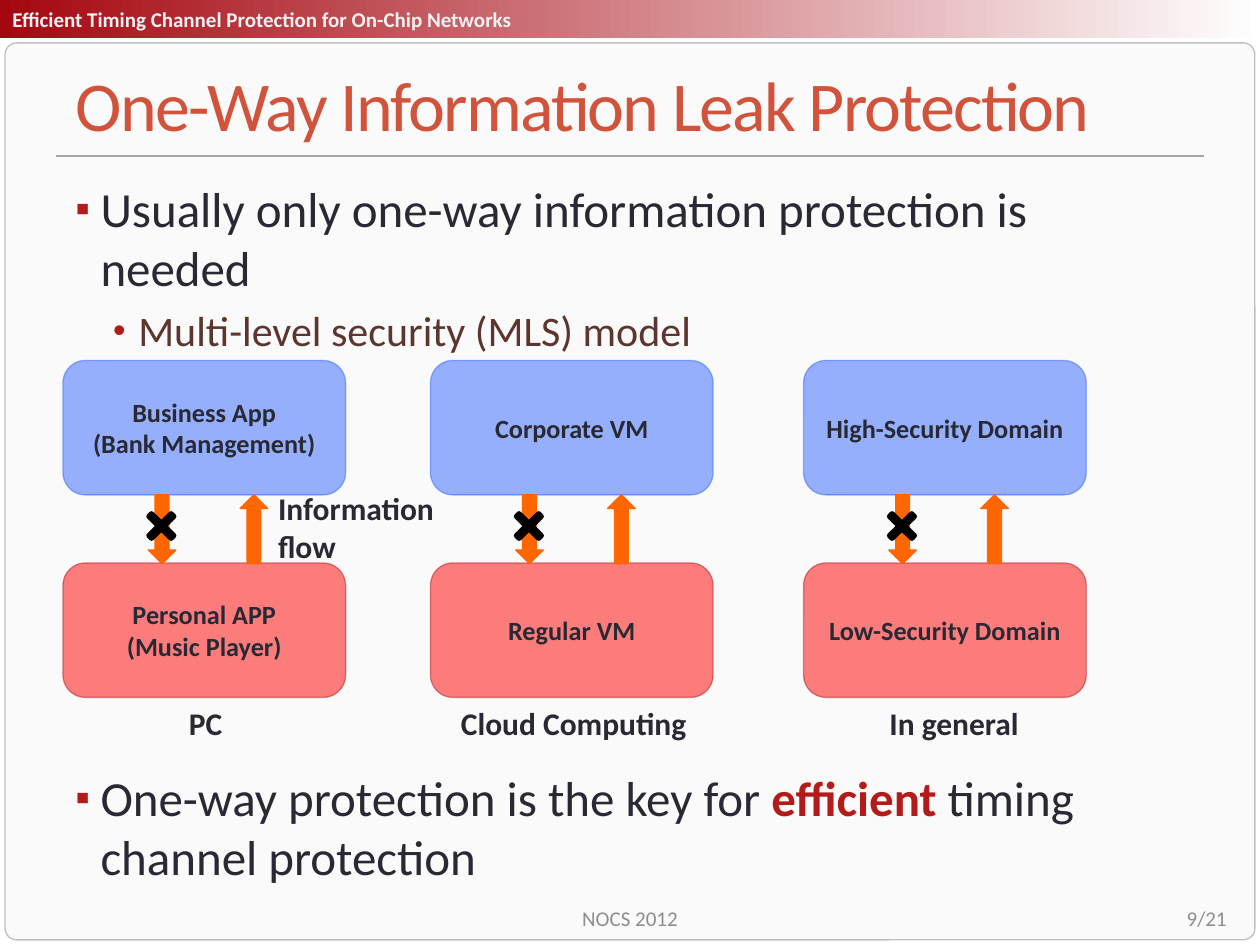
from lxml import etree
from pptx import Presentation
from pptx.dml import color
from pptx.enum import shapes, text
from pptx.oxml import ns
from pptx.util import Pt

RGBColor = color.RGBColor
WHITE = RGBColor(0xFF, 0xFF, 0xFF)
PANEL = RGBColor(0xFA, 0xFA, 0xFA)
PANEL_EDGE = RGBColor(0xBF, 0xBF, 0xBF)
RULE = RGBColor(0xA6, 0xA6, 0xA6)
HEADER_RED = RGBColor(0xA5, 0x07, 0x10)
HEADER_TEXT = RGBColor(0xF2, 0xF2, 0xF2)
TITLE = RGBColor(0xD2, 0x53, 0x3C)
INK = RGBColor(0x29, 0x29, 0x34)
BROWN = RGBColor(0x5B, 0x35, 0x2E)
ACCENT = RGBColor(0xB3, 0x1B, 0x1B)
FOOTER = RGBColor(0x8D, 0x8D, 0x8F)
HIGH = RGBColor(0x33, 0x66, 0xFF)
LOW = RGBColor(0xFF, 0x00, 0x00)
FLOW = RGBColor(0xFF, 0x66, 0x00)
BLACK = RGBColor(0, 0, 0)

FONT = "Calibri"
KINDS = shapes.MSO_SHAPE
LEFT, CENTER, RIGHT = text.PP_ALIGN.LEFT, text.PP_ALIGN.CENTER, text.PP_ALIGN.RIGHT
MIDDLE = text.MSO_ANCHOR.MIDDLE

BOX_WIDTH, BOX_HEIGHT = 161.5, 76.8
HIGH_TOP, LOW_TOP = 206, 321.7
ARROW_TOP = 282.7

# column left, high box, low box, caption, caption left, caption width
COLUMNS = [
    (36, "Business App\n(Bank Management)", "Personal APP\n(Music Player)", "PC", 100.8, 34),
    (246, "Corporate VM", "Regular VM", "Cloud Computing", 256.3, 145),
    (459.2, "High-Security Domain", "Low-Security Domain", "In general", 501.2, 89),
]


def style(span, size, ink, bold=False):
    span.font.name = FONT
    span.font.size = Pt(size)
    span.font.color.rgb = ink
    span.font.bold = bold


def write(frame, words, size, ink, bold=False, align=LEFT):
    frame.text = words
    for para in frame.paragraphs:
        para.alignment = align
        for span in para.runs:
            style(span, size, ink, bold)


def add_label(page, place, words, size, ink, bold=False, align=LEFT, wrap=False):
    box = page.shapes.add_textbox(*map(Pt, place))
    box.text_frame.word_wrap = wrap
    write(box.text_frame, words, size, ink, bold, align)
    return box


def add_figure(page, kind, place, fill, edge, weight=0.75):
    figure = page.shapes.add_shape(kind, *map(Pt, place))
    figure.shadow.inherit = False
    figure.fill.solid()
    figure.fill.fore_color.rgb = fill
    figure.line.color.rgb = edge
    figure.line.width = Pt(weight)
    return figure


def make_half_transparent(figure):
    """Give both the fill and the outline 50 % opacity."""
    for tone in figure._element.spPr.iter(ns.qn("a:srgbClr")):
        etree.SubElement(tone, ns.qn("a:alpha"), val="50000")


def add_domain(page, left, top, words, fill, edge):
    place = (left, top, BOX_WIDTH, BOX_HEIGHT)
    domain = add_figure(page, KINDS.ROUNDED_RECTANGLE, place, fill, edge)
    make_half_transparent(domain)
    domain.text_frame.vertical_anchor = MIDDLE
    write(domain.text_frame, words, 15, INK, True, CENTER)


def add_column(page, left, high, low, caption, caption_left, caption_width):
    add_domain(page, left, LOW_TOP, low, LOW, ACCENT)
    add_domain(page, left, HIGH_TOP, high, HIGH, HIGH)
    for kind, offset in ((KINDS.DOWN_ARROW, 48.7), (KINDS.UP_ARROW, 101.2)):
        add_figure(page, kind, (left + offset, ARROW_TOP, 15.8, 39.5), FLOW, FLOW)
    cross = add_figure(page, KINDS.MATH_MULTIPLY, (left + 44, 288.6, 24.5, 24), BLACK, BLACK, 3)
    cross.adjustments[0] = 0.088
    add_label(page, (caption_left, 399, caption_width, 29), caption, 18, INK, True)


def add_bullet(para, spans, size, mark, margin):
    """Fill a paragraph with (words, colour, bold) spans and a hanging bullet."""
    para.space_before = Pt(size * 0.2)
    for words, ink, bold in spans:
        span = para.add_run()
        span.text = words
        style(span, size, ink, bold)
    props = para._p.get_or_add_pPr()
    props.set("marL", str(Pt(margin)))
    props.set("indent", str(Pt(-14.4)))
    tone = etree.SubElement(props, ns.qn("a:buClr"))
    etree.SubElement(tone, ns.qn("a:srgbClr"), val=str(ACCENT))
    etree.SubElement(props, ns.qn("a:buSzPct"), val="85000")
    etree.SubElement(props, ns.qn("a:buFont"), typeface="Arial")
    etree.SubElement(props, ns.qn("a:buChar"), char=mark)


def add_body(page, top, height):
    box = page.shapes.add_textbox(Pt(36), Pt(top), Pt(648), Pt(height))
    box.text_frame.word_wrap = True
    return box.text_frame


def add_backdrop(page):
    panel = add_figure(page, KINDS.ROUNDED_RECTANGLE, (2.9, 24.5, 714.2, 512.6), PANEL, PANEL_EDGE)
    panel.adjustments[0] = 0.013

    header = add_figure(page, KINDS.RECTANGLE, (0, 0, 720, 21.6), HEADER_RED, HEADER_RED)
    header.line.fill.background()
    header.fill.gradient()
    header.fill.gradient_angle = 0
    for stop, tone in zip(header.fill.gradient_stops, (HEADER_RED, WHITE)):
        stop.color.rgb = tone
    header.text_frame.word_wrap = False
    header.text_frame.vertical_anchor = MIDDLE
    write(header.text_frame, "Efficient Timing Channel Protection for On-Chip Networks",
          12, HEADER_TEXT, True)

    rule = page.shapes.add_connector(shapes.MSO_CONNECTOR.STRAIGHT,
                                     Pt(32), Pt(89.2), Pt(688), Pt(89.2))
    rule.line.color.rgb = RULE
    rule.line.width = Pt(0.75)
    etree.SubElement(rule._element.spPr, ns.qn("a:effectLst"))


def set_title(page, words):
    """Format the title and bring it in front of the backdrop."""
    title = page.shapes.title
    title.left, title.top, title.width, title.height = map(Pt, (36, 30.2, 648, 57.6))
    frame = title.text_frame
    frame.vertical_anchor = MIDDLE
    write(frame, words, 40, TITLE)
    frame.paragraphs[0].runs[0]._r.get_or_add_rPr().set("spc", "-100")
    title._element.getparent().append(title._element)


def add_footer(page, left, width, words, align):
    box = add_label(page, (left, 516, width, 17), words, 12, FOOTER, align=align, wrap=True)
    box.text_frame.vertical_anchor = MIDDLE


def main():
    deck = Presentation()
    deck.slide_width, deck.slide_height = Pt(720), Pt(540)
    page = deck.slides.add_slide(deck.slide_layouts[5])

    add_backdrop(page)
    set_title(page, "One-Way Information Leak Protection")

    opening = add_body(page, 98.6, 107)
    add_bullet(opening.paragraphs[0],
               [("Usually only one-way information protection is needed", INK, False)],
               28, "▪", 14.4)
    add_bullet(opening.add_paragraph(),
               [("Multi-level security (MLS) model", BROWN, False)], 24, "•", 36)
    closing = add_body(page, 435.2, 78)
    add_bullet(closing.paragraphs[0],
               [("One-way protection is the key for ", INK, False),
                ("efficient", ACCENT, True),
                (" timing channel protection", INK, False)], 28, "▪", 14.4)

    for column in COLUMNS:
        add_column(page, *column)
    add_label(page, (151.8, 275.8, 104.5, 51), "Information\nflow", 18, INK, True)

    add_footer(page, 246, 228, "NOCS 2012", CENTER)
    add_footer(page, 540, 168, "9/21", RIGHT)
    deck.save("out.pptx")


if __name__ == "__main__":
    main()
